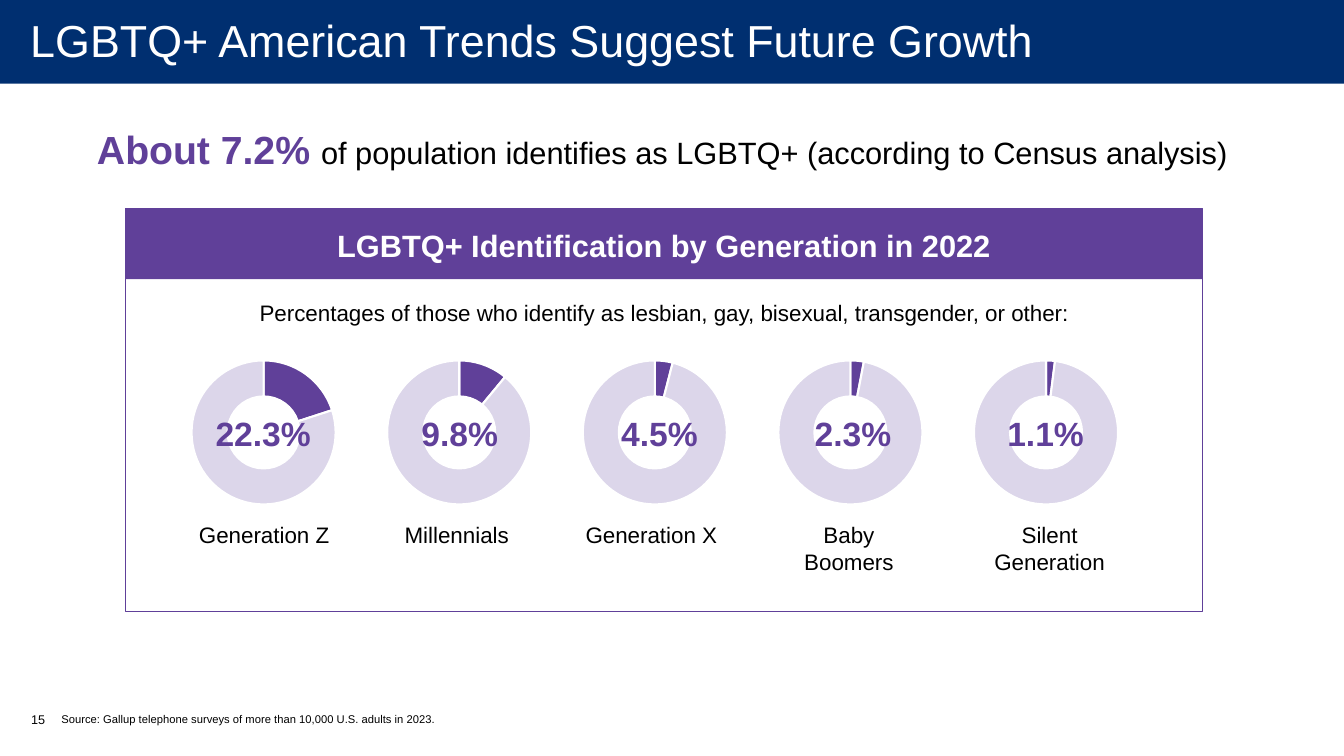
from lxml import etree
from pptx import Presentation
from pptx.chart.data import CategoryChartData
from pptx.dml.color import RGBColor
from pptx.enum.chart import XL_CHART_TYPE
from pptx.enum.shapes import MSO_SHAPE
from pptx.enum.text import MSO_ANCHOR, PP_ALIGN
from pptx.oxml import parse_xml
from pptx.oxml.ns import nsdecls
from pptx.util import Inches, Pt

NAVY, PURPLE, LILAC = "002F70", "604099", "DCD6EA"
WHITE, BLACK = "FFFFFF", "000000"
FONT = "Arial"

TITLE = "LGBTQ+ American Trends Suggest Future Growth"
HEADLINE = [
    ("About 7.2% ", {"size": 28, "color": PURPLE, "bold": True}),
    ("of population identifies as LGBTQ+ (according to Census analysis)", {"size": 22}),
]
PANEL_TITLE = "LGBTQ+ Identification by Generation in 2022"
PANEL_NOTE = "Percentages of those who identify as lesbian, gay, bisexual, transgender, or other:"
SOURCE = "Source: Gallup telephone surveys of more than 10,000 U.S. adults in 2023."
PAGE_NUMBER = "15"

# Generation, share shown, slice drawn, centre of share, centre of name
GENERATIONS = [
    ("Generation Z", "22.3%", 20, 2.61, 2.62),
    ("Millennials", "9.8%", 11, 4.56, 4.53),
    ("Generation X", "4.5%", 4, 6.54, 6.46),
    ("Baby Boomers", "2.3%", 3, 8.46, 8.42),
    ("Silent Generation", "1.1%", 2, 10.37, 10.41),
]
CHART_LEFT, CHART_STEP, CHART_TOP = 1.76, 1.94, 3.29
CHART_WIDTH, CHART_HEIGHT, RING = 1.71, 2, 1.43
SHARE_WIDTH, NAME_WIDTH = 1.31, 1.58
PANEL_LEFT, PANEL_TOP, PANEL_WIDTH = 1.24, 2.07, 10.69


def rgb(color):
    return RGBColor.from_string(color)


def box(left, top, width, height):
    return [Inches(value) for value in (left, top, width, height)]


def format_font(font, size, color=BLACK, bold=False):
    for name, value in {"name": FONT, "size": Pt(size), "bold": bold}.items():
        setattr(font, name, value)
    font.color.rgb = rgb(color)


def add_text(slide, place, runs, align=PP_ALIGN.CENTER, wrap=True):
    text_box = slide.shapes.add_textbox(*box(*place))
    text_box.text_frame.word_wrap = wrap
    paragraph = text_box.text_frame.paragraphs[0]
    paragraph.alignment = align
    for text, style in runs:
        run = paragraph.add_run()
        run.text = text
        format_font(run.font, **style)
    return paragraph


def add_rectangle(slide, place, fill=None, line=None):
    shape = slide.shapes.add_shape(MSO_SHAPE.RECTANGLE, *box(*place))
    shape.shadow.inherit = False
    if fill:
        shape.fill.solid()
        shape.fill.fore_color.rgb = rgb(fill)
    else:
        shape.fill.background()
    if line:
        shape.line.color.rgb = rgb(line)
        shape.line.width = Pt(0.75)
    else:
        shape.line.fill.background()
    return shape


def set_plot_layout(chart):
    """Centre the ring in the chart frame at a fixed diameter."""
    width, height = RING / CHART_WIDTH, RING / CHART_HEIGHT
    sizes = {"x": (1 - width) / 2, "y": (1 - height) / 2, "w": width, "h": height}
    layout = parse_xml(
        f'<c:layout {nsdecls("c")}><c:manualLayout><c:layoutTarget val="inner"/>'
        '<c:xMode val="edge"/><c:yMode val="edge"/></c:manualLayout></c:layout>')
    for name, value in sizes.items():
        tag = etree.QName(layout).namespace
        etree.SubElement(layout[0], f"{{{tag}}}{name}").set("val", f"{value:.3f}")
    plot_area = chart.element.xpath(".//c:plotArea")[0]
    for old_layout in plot_area.xpath("./c:layout"):
        plot_area.remove(old_layout)
    plot_area.insert(0, layout)


def add_ring(slide, left, share):
    data = CategoryChartData()
    data.categories = ["LGBTQ+", "Other"]
    data.add_series("Series 1", (share, 100 - share))
    chart = slide.shapes.add_chart(
        XL_CHART_TYPE.DOUGHNUT, *box(left, CHART_TOP, CHART_WIDTH, CHART_HEIGHT), data).chart
    chart.has_legend = False
    chart.has_title = False
    format_font(chart.font, 10)
    for index, color in enumerate((PURPLE, LILAC)):
        point = chart.plots[0].series[0].points[index].format
        point.fill.solid()
        point.fill.fore_color.rgb = rgb(color)
        point.line.color.rgb = rgb(WHITE)
        point.line.width = Pt(1.5)
    chart.element.xpath(".//c:holeSize")[0].set("val", "75")
    set_plot_layout(chart)


def add_title(slide):
    title = slide.shapes.title
    title.left, title.top, title.width, title.height = box(0, -0.09, 13.33, 0.97)
    frame = title.text_frame
    frame.text = TITLE
    settings = {"margin_left": Inches(0.3), "margin_right": Inches(0.2), "margin_top": 0,
                "margin_bottom": 0, "vertical_anchor": MSO_ANCHOR.MIDDLE, "word_wrap": True}
    for name, value in settings.items():
        setattr(frame, name, value)
    frame.paragraphs[0].alignment = PP_ALIGN.LEFT
    format_font(frame.paragraphs[0].runs[0].font, 32, WHITE)
    band = add_rectangle(slide, (0, -0.03, 13.33, 0.86), fill=NAVY)
    title.element.addprevious(band.element)


def main():
    presentation = Presentation()
    presentation.slide_width, presentation.slide_height = Inches(13.33), Inches(7.5)
    slide = presentation.slides.add_slide(presentation.slide_layouts[5])
    add_title(slide)

    headline = add_text(slide, (0.67, 1.16, 11.8, 0.61), HEADLINE)
    headline.line_spacing = 1.07
    headline.space_after = Pt(8)

    add_rectangle(slide, (PANEL_LEFT, PANEL_TOP, PANEL_WIDTH, 0.7), fill=PURPLE)
    add_rectangle(slide, (PANEL_LEFT, PANEL_TOP, PANEL_WIDTH, 4), line=PURPLE)
    add_text(slide, (PANEL_LEFT, 2.2, PANEL_WIDTH, 0.47),
             [(PANEL_TITLE, {"size": 22, "color": WHITE, "bold": True})])
    add_text(slide, (2.11, 2.92, 8.96, 0.37), [(PANEL_NOTE, {"size": 16})])

    for index, (name, label, share, label_centre, name_centre) in enumerate(GENERATIONS):
        add_ring(slide, CHART_LEFT + index * CHART_STEP, share)
        add_text(slide, (label_centre - SHARE_WIDTH / 2, 4.05, SHARE_WIDTH, 0.5),
                 [(label, {"size": 24, "color": PURPLE, "bold": True})])
        add_text(slide, (name_centre - NAME_WIDTH / 2, 5.12, NAME_WIDTH, 0.64),
                 [(name, {"size": 16})])

    add_text(slide, (0.51, 7.02, 3.93, 0.24), [(SOURCE, {"size": 8})], PP_ALIGN.LEFT, False)
    add_text(slide, (0.21, 7.01, 0.49, 0.4), [(PAGE_NUMBER, {"size": 9})], PP_ALIGN.LEFT)
    presentation.save("out.pptx")


if __name__ == "__main__":
    main()
